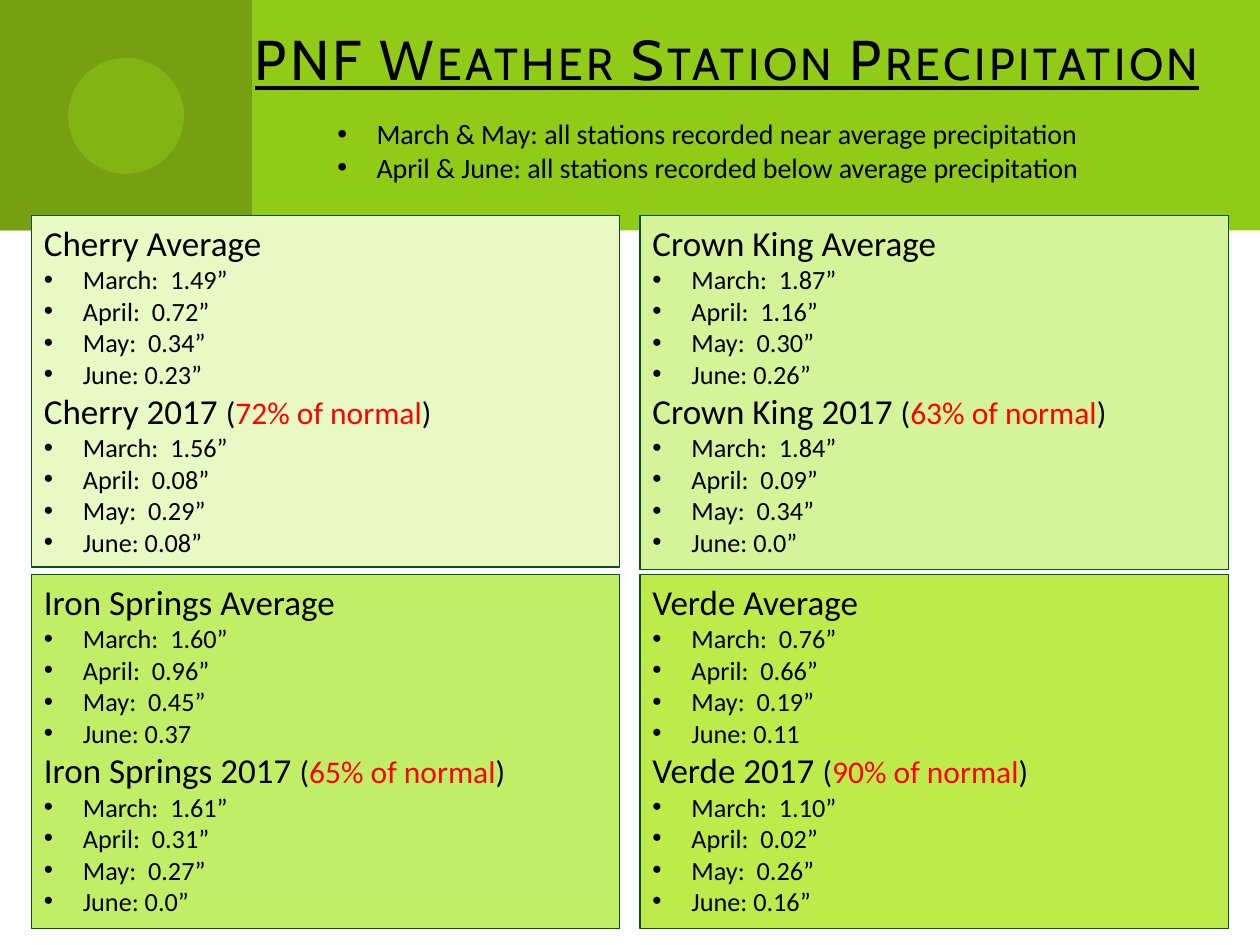
"""Build the PNF weather station precipitation slide."""
from dataclasses import dataclass

from lxml import etree
from pptx import Presentation
from pptx.dml.color import RGBColor
from pptx.enum.shapes import MSO_SHAPE
from pptx.enum.text import MSO_ANCHOR, MSO_AUTO_SIZE, PP_ALIGN
from pptx.oxml.ns import qn
from pptx.util import Inches, Pt

RECTANGLE, OVAL = MSO_SHAPE.RECTANGLE, MSO_SHAPE.OVAL
TOP, MIDDLE = MSO_ANCHOR.TOP, MSO_ANCHOR.MIDDLE
LEFT, CENTER = PP_ALIGN.LEFT, PP_ALIGN.CENTER
NO_FIT = MSO_AUTO_SIZE.NONE


@dataclass(frozen=True)
class Theme:
    title_font: str = "Cabin"
    body_font: str = "Calibri"
    title_size: int = 32
    heading_size: int = 20
    percent_size: int = 18
    summary_size: int = 16
    month_size: int = 15
    text: str = "000000"
    accent: str = "FF0000"
    border: str = "065218"
    banner: str = "8FCB17"
    corner: str = "769F11"


THEME = Theme()
MONTHS = ["March:  ", "April:  ", "May:  ", "June: "]
STATIONS = [
    ("Cherry", "72%", "E9F9C3", 2.79,
     ["1.49”", "0.72”", "0.34”", "0.23”"], ["1.56”", "0.08”", "0.29”", "0.08”"]),
    ("Crown King", "63%", "D5F399", 2.81,
     ["1.87”", "1.16”", "0.30”", "0.26”"], ["1.84”", "0.09”", "0.34”", "0.0”"]),
    ("Iron Springs", "65%", "C0EE66", 2.81,
     ["1.60”", "0.96”", "0.45”", "0.37"], ["1.61”", "0.31”", "0.27”", "0.0”"]),
    ("Verde", "90%", "BDEC4A", 2.81,
     ["0.76”", "0.66”", "0.19”", "0.11"], ["1.10”", "0.02”", "0.26”", "0.16”"]),
]
SUMMARY = [
    "March & May: all stations recorded near average precipitation",
    "April & June: all stations recorded below average precipitation",
]

deck = Presentation()
deck.slide_width, deck.slide_height = Inches(10), Inches(7.5)
page = deck.slides.add_slide(deck.slide_layouts[5])


def add_block(kind, left, top, width, height, fill):
    block = page.shapes.add_shape(
        kind, Inches(left), Inches(top), Inches(width), Inches(height))
    block.shadow.inherit = False
    block.fill.solid()
    block.fill.fore_color.rgb = RGBColor.from_string(fill)
    block.line.fill.background()
    return block


def add_line(frame, words, size, bullet=False):
    first = frame.paragraphs[0]
    para = frame.add_paragraph() if first.runs else first
    para.alignment = LEFT
    if bullet:
        settings = para._p.get_or_add_pPr()
        settings.set("marL", str(Inches(0.31)))
        settings.set("indent", str(-Inches(0.31)))
        etree.SubElement(settings, qn("a:buFont")).set("typeface", "Arial")
        etree.SubElement(settings, qn("a:buChar")).set("char", "•")
    para.font.name = THEME.body_font
    para.font.size = Pt(size)
    para.font.color.rgb = RGBColor.from_string(THEME.text)
    for word in words:
        para.add_run().text = word
    return para


add_block(RECTANGLE, 0, 0, 10, 1.83, THEME.banner)
add_block(RECTANGLE, 0, 0, 2, 1.83, THEME.corner)
circle = add_block(OVAL, 0.54, 0.46, 0.92, 0.92, THEME.banner)
circle_color = circle.fill._xPr.find(qn("a:solidFill"))[0]
etree.SubElement(circle_color, qn("a:alpha")).set("val", "50000")

title = page.shapes.title
page.shapes._spTree.append(title._element)
title.left, title.top = Inches(1.92), Inches(0.01)
title.width, title.height = Inches(7.92), Inches(0.91)
title.text_frame.auto_size = NO_FIT
title.text_frame.vertical_anchor = MIDDLE
para = title.text_frame.paragraphs[0]
para.alignment = CENTER
span = para.add_run()
span.text = "PNF Weather Station Precipitation"
span.font.name = THEME.title_font
span.font.size = Pt(THEME.title_size)
span.font.underline = True
span.font.color.rgb = RGBColor.from_string(THEME.text)
span.font._element.set("cap", "small")
span.font._element.set("spc", "200")

for index, (name, percent, fill, height, average, recorded) in enumerate(STATIONS):
    row, column = divmod(index, 2)
    card = add_block(
        RECTANGLE, 0.25 + 4.83 * column, 1.71 + 2.85 * row, 4.67, height, fill)
    card.line.color.rgb = RGBColor.from_string(THEME.border)
    card.line.width = Pt(0.75)
    frame = card.text_frame
    frame.word_wrap = True
    frame.vertical_anchor = TOP
    headings = [
        ([f"{name} Average"], average),
        ([f"{name} 2017 ", "(", f"{percent} of normal", ")"], recorded),
    ]
    for words, amounts in headings:
        heading = add_line(frame, words, THEME.percent_size)
        heading.runs[0].font.size = Pt(THEME.heading_size)
        for span in heading.runs[2:3]:
            span.font.color.rgb = RGBColor.from_string(THEME.accent)
        for month, amount in zip(MONTHS, amounts):
            add_line(frame, [month + amount], THEME.month_size, bullet=True)

box = page.shapes.add_textbox(Inches(2.58), Inches(0.88), Inches(6.21), Inches(0.64))
box.text_frame.word_wrap = True
for sentence in SUMMARY:
    add_line(box.text_frame, [sentence], THEME.summary_size, bullet=True)

deck.save("out.pptx")
